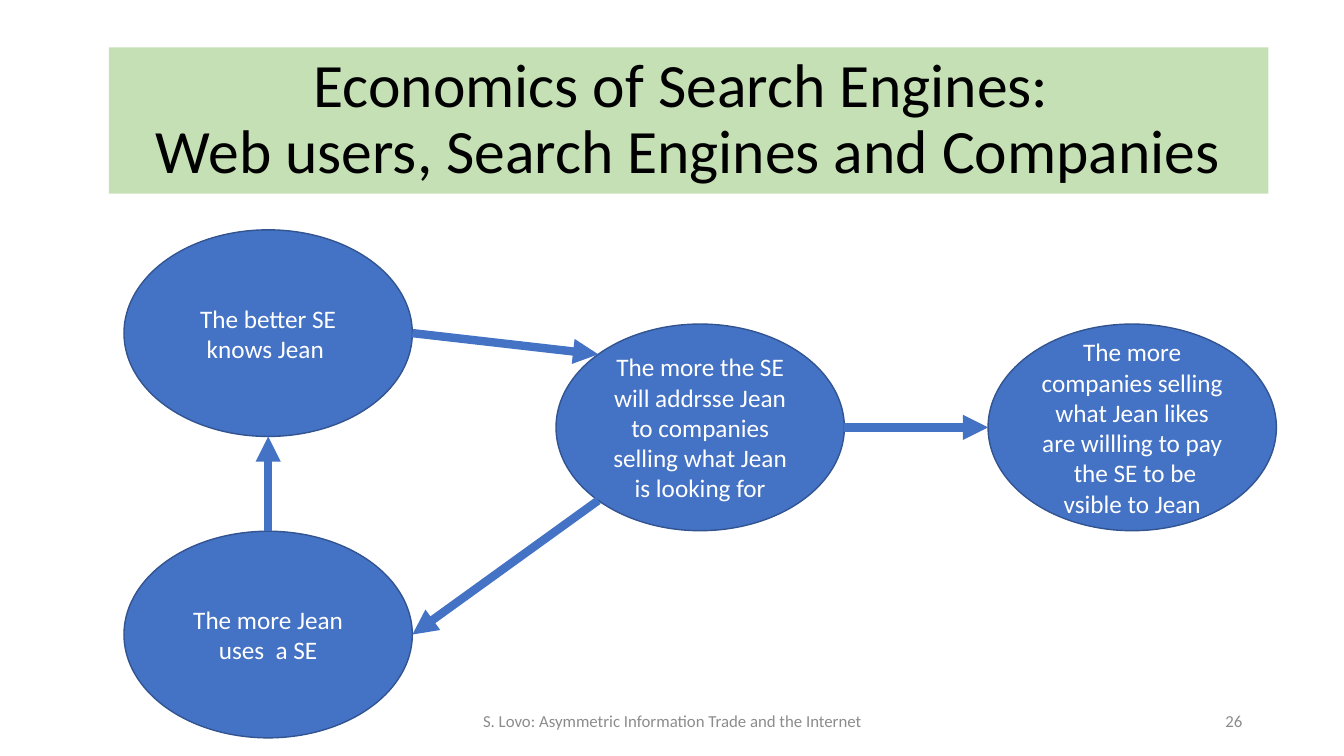
"""Build the slide on the economics of search engines as a loop of ellipses."""
import math

import pptx
import pptx.dml.color
import pptx.enum.shapes
import pptx.enum.text
import pptx.oxml
import pptx.oxml.ns
import pptx.util

RGBColor = pptx.dml.color.RGBColor
Inches = pptx.util.Inches
ALIGN = pptx.enum.text.PP_ALIGN

BLUE = RGBColor(0x44, 0x72, 0xC4)
DARK_BLUE = RGBColor(0x32, 0x54, 0x91)
GREEN = RGBColor(0xC5, 0xE0, 0xB4)
GREY = RGBColor(0x8C, 0x8C, 0x8C)
BLACK = RGBColor(0, 0, 0)
WHITE = RGBColor(255, 255, 255)

SLIDE_SIZE = (13.33, 7.5)
TITLE_LINES = ("Economics of Search Engines: ", "Web users, Search Engines and Companies")
TITLE_BOX = (1.08, 0.47, 11.5, 1.45)

NODE_SIZE = (2.86, 2.05)
COLUMNS = [1.23 + 4.285 * column for column in range(3)]
ROWS = {"top": 2.28, "middle": 3.215, "bottom": 5.27}
NODES = {
    "uses": (0, "bottom", "The more Jean uses  a SE"),
    "knows": (0, "top", "The better SE knows Jean "),
    "pay": (2, "middle", "The more companies selling what Jean likes are willling to pay  "
                         "the SE to be vsible to Jean"),
    "address": (1, "middle", "The more the SE will addrsse Jean to companies selling "
                             "what Jean is looking for"),
}
RIGHT, LOWER_LEFT, BOTTOM, LEFT, UPPER_LEFT, TOP = 0, 135, 90, 180, 225, 270
ARROWS = [
    ("knows", RIGHT, "address", UPPER_LEFT),
    ("address", RIGHT, "pay", LEFT),
    ("address", LOWER_LEFT, "uses", RIGHT),
    ("uses", TOP, "knows", BOTTOM),
]
FOOTERS = [
    ("S. Lovo: Asymmetric Information Trade and the Internet", (4.42, 6.95, 4.5, 0.4), ALIGN.CENTER),
    ("26", (9.42, 6.95, 3, 0.4), ALIGN.RIGHT),
]


def write(shape, lines, size, color, **paragraph_format):
    frame = shape.text_frame
    frame_format = {"word_wrap": True, "auto_size": pptx.enum.text.MSO_AUTO_SIZE.NONE,
                    "vertical_anchor": pptx.enum.text.MSO_ANCHOR.MIDDLE}
    for name, value in frame_format.items():
        setattr(frame, name, value)
    paragraph = frame.paragraphs[0]
    for name, value in paragraph_format.items():
        setattr(paragraph, name, value)
    for number, line in enumerate(lines):
        if number:
            paragraph.add_line_break()
        run = paragraph.add_run()
        run.text = line
        for name, value in {"name": "Calibri", "size": pptx.util.Pt(size)}.items():
            setattr(run.font, name, value)
        run.font.color.rgb = color


def node_corner(node):
    column, row, _ = NODES[node]
    return COLUMNS[column], ROWS[row]


def rim_point(node, degrees):
    angle = math.radians(degrees)
    return [Inches(start + extent / 2 * (1 + turn)) for start, extent, turn
            in zip(node_corner(node), NODE_SIZE, (math.cos(angle), math.sin(angle)))]


def add_node(slide, node):
    ellipse = slide.shapes.add_shape(pptx.enum.shapes.MSO_SHAPE.OVAL,
                                     *map(Inches, node_corner(node) + NODE_SIZE))
    ellipse.shadow.inherit = False
    ellipse.fill.solid()
    ellipse.fill.fore_color.rgb = BLUE
    ellipse.line.color.rgb = DARK_BLUE
    ellipse.line.width = pptx.util.Pt(1)
    write(ellipse, [NODES[node][2]], 18, WHITE, alignment=ALIGN.CENTER)


def add_arrow(slide, source, source_angle, target, target_angle):
    arrow = slide.shapes.add_connector(pptx.enum.shapes.MSO_CONNECTOR.STRAIGHT,
                                       *rim_point(source, source_angle),
                                       *rim_point(target, target_angle))
    arrow.line.color.rgb = BLUE
    arrow.line.width = pptx.util.Pt(6)
    head = pptx.oxml.parse_xml(f'<a:tailEnd {pptx.oxml.ns.nsdecls("a")} type="triangle"/>')
    arrow.line._get_or_add_ln().append(head)
    arrow._element.spPr.append(pptx.oxml.parse_xml(f'<a:effectLst {pptx.oxml.ns.nsdecls("a")}/>'))


def main():
    deck = pptx.Presentation()
    deck.slide_width, deck.slide_height = map(Inches, SLIDE_SIZE)
    slide = deck.slides.add_slide(deck.slide_layouts[5])

    title = slide.shapes.title
    for name, value in zip(("left", "top", "width", "height"), TITLE_BOX):
        setattr(title, name, Inches(value))
    title.fill.solid()
    title.fill.fore_color.rgb = GREEN
    write(title, TITLE_LINES, 44, BLACK, alignment=ALIGN.CENTER, line_spacing=0.9)

    for node in NODES:
        add_node(slide, node)
    for arrow in ARROWS:
        add_arrow(slide, *arrow)
    for text, box, alignment in FOOTERS:
        footer = slide.shapes.add_textbox(*map(Inches, box))
        write(footer, [text], 12, GREY, alignment=alignment)

    deck.save("out.pptx")


if __name__ == "__main__":
    main()
